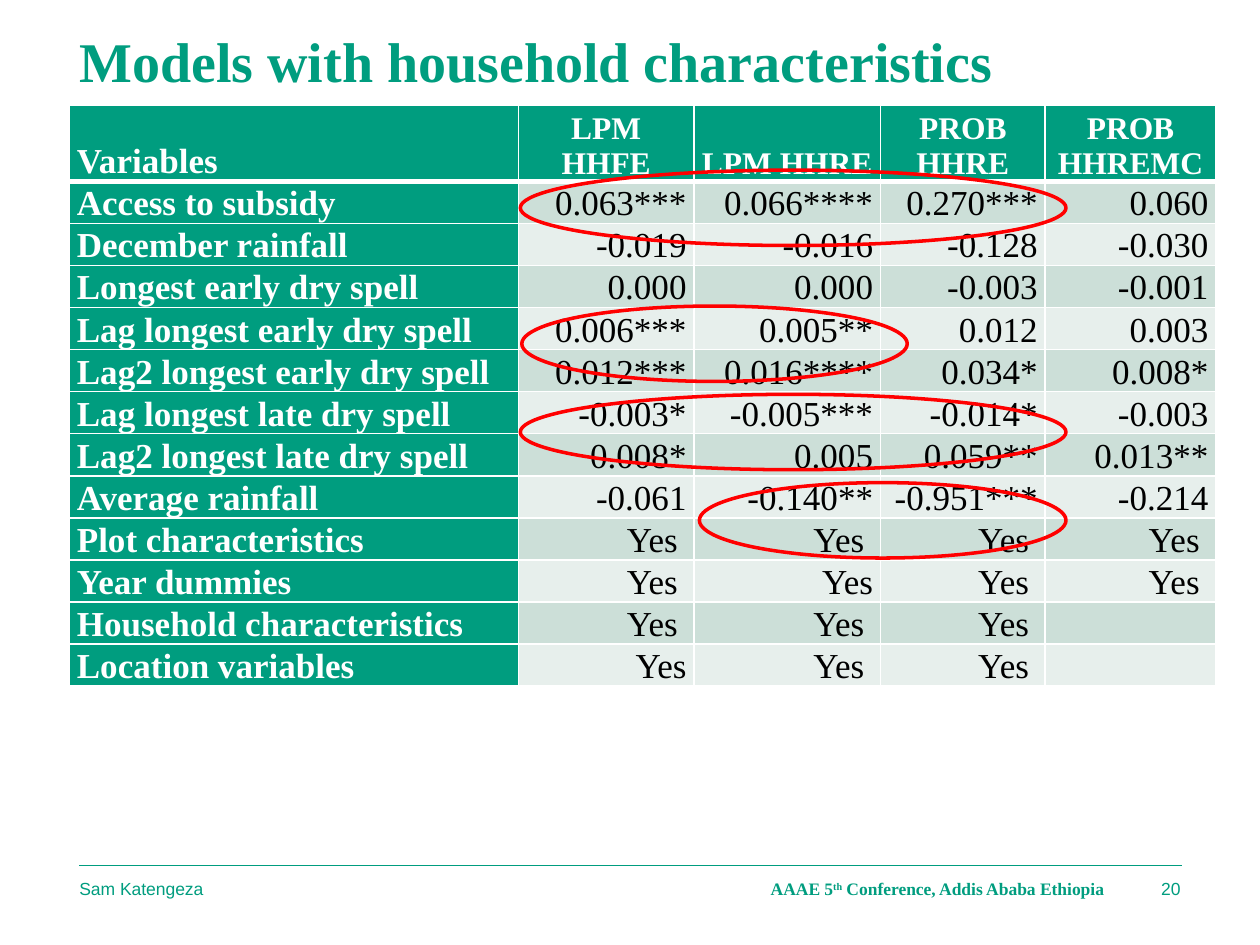
from lxml import etree
from pptx import Presentation
from pptx.dml.color import RGBColor
from pptx.enum.shapes import MSO_CONNECTOR, MSO_SHAPE
from pptx.enum.text import MSO_ANCHOR, PP_ALIGN
from pptx.oxml.ns import qn
from pptx.util import Cm, Pt

GREEN = RGBColor(0x00, 0x9D, 0x7F)
BAND_DARK = RGBColor(0xCC, 0xDF, 0xD8)
BAND_LIGHT = RGBColor(0xE7, 0xEF, 0xEC)
WHITE = RGBColor(0xFF, 0xFF, 0xFF)
BLACK = RGBColor(0x00, 0x00, 0x00)
RED = RGBColor(0xFF, 0x00, 0x00)
LEFT, CENTER, RIGHT, JUSTIFY = PP_ALIGN.LEFT, PP_ALIGN.CENTER, PP_ALIGN.RIGHT, PP_ALIGN.JUSTIFY
MIDDLE, BOTTOM = MSO_ANCHOR.MIDDLE, MSO_ANCHOR.BOTTOM
SERIF, SANS = "Times New Roman", "Arial"


def add_text(x, y, w, h, runs, size, font, bold, align, anchor):
    tf = s.shapes.add_textbox(Cm(x), Cm(y), Cm(w), Cm(h)).text_frame
    tf.margin_left = tf.margin_right = tf.margin_top = tf.margin_bottom = 0
    tf.word_wrap = True
    tf.vertical_anchor = anchor
    p = tf.paragraphs[0]
    p.alignment = align
    p.font.size, p.font.name, p.font.bold = Pt(size), font, bold
    p.font.color.rgb = GREEN
    for text in runs:
        p.add_run().text = text
    return p


def add_borders(cell, bottom):
    tcPr = cell._tc.get_or_add_tcPr()
    for tag, width in (("lnL", 1), ("lnR", 1), ("lnT", 1), ("lnB", bottom)):
        ln = etree.SubElement(tcPr, qn(f"a:{tag}"), w=str(Pt(width)))
        fill = etree.SubElement(ln, qn("a:solidFill"))
        etree.SubElement(fill, qn("a:srgbClr"), val=str(WHITE))


prs = Presentation()
prs.slide_width, prs.slide_height = Cm(25.4), Cm(19.05)
s = prs.slides.add_slide(prs.slide_layouts[6])

# Footer rule
rule = s.shapes.add_connector(MSO_CONNECTOR.STRAIGHT, Cm(1.6), Cm(17.45), Cm(23.83), Cm(17.45))
rule.line.color.rgb = GREEN
rule.line.width = Pt(1)
etree.SubElement(rule._element.spPr, qn("a:effectLst"))

# Title
add_text(1.6, 0.53, 20.7, 1.37, ["Models with household characteristics"],
         32, SERIF, True, JUSTIFY, BOTTOM)

# Regression table; a space after some "Yes" entries sets them off the edge
rows = [
    ("Variables", "LPM HHFE", "LPM HHRE", "PROB HHRE", "PROB HHREMC"),
    ("Access to subsidy", "0.063***", "0.066****", "0.270***", "0.060"),
    ("December rainfall", "-0.019", "-0.016", "-0.128", "-0.030"),
    ("Longest early dry spell", "0.000", "0.000", "-0.003", "-0.001"),
    ("Lag longest early dry spell", "0.006***", "0.005**", "0.012", "0.003"),
    ("Lag2 longest early dry spell", "0.012***", "0.016****", "0.034*", "0.008*"),
    ("Lag longest late dry spell", "-0.003*", "-0.005***", "-0.014*", "-0.003"),
    ("Lag2 longest late dry spell", "0.008*", "0.005", "0.059**", "0.013**"),
    ("Average rainfall", "-0.061", "-0.140**", "-0.951***", "-0.214"),
    ("Plot characteristics", "Yes ", "Yes ", "Yes ", "Yes "),
    ("Year dummies", "Yes ", "Yes", "Yes ", "Yes "),
    ("Household characteristics", "Yes ", "Yes ", "Yes ", ""),
    ("Location variables", "Yes", "Yes ", "Yes ", ""),
]
col_widths = [9.05, 3.54, 3.76, 3.32, 3.44]
head_height, row_height = 1.5, 0.84
table = s.shapes.add_table(len(rows), len(col_widths), Cm(1.4), Cm(2.13), Cm(sum(col_widths)),
                           Cm(head_height + row_height * (len(rows) - 1))).table
for col, width in zip(table.columns, col_widths):
    col.width = Cm(width)
for i, row in enumerate(rows):
    table.rows[i].height = Cm(row_height if i else head_height)
    for j, text in enumerate(row):
        cell = table.cell(i, j)
        is_head = i == 0 or j == 0
        add_borders(cell, 1 if i else 3)
        cell.fill.solid()
        cell.fill.fore_color.rgb = GREEN if is_head else BAND_DARK if i % 2 else BAND_LIGHT
        cell.margin_left = cell.margin_right = Cm(0.15)
        cell.margin_top = cell.margin_bottom = 0
        cell.vertical_anchor = BOTTOM
        p = cell.text_frame.paragraphs[0]
        p.alignment = LEFT if j == 0 else RIGHT if i else CENTER
        p.line_spacing = 1.0
        p.font.size = Pt(18 if i == 0 and j else 20)
        p.font.name, p.font.bold = SERIF, is_head
        p.font.color.rgb = WHITE if is_head else BLACK
        if text:
            p.add_run().text = text

# Footer
p = add_text(14.88, 17.7, 8.03, 0.43, ["AAAE 5", "th", " Conference, Addis Ababa Ethiopia"],
             10, SERIF, True, CENTER, MIDDLE)
p.runs[1]._r.get_or_add_rPr().set("baseline", "30000")
add_text(1.6, 17.7, 13.2, 0.43, ["Sam Katengeza"], 10, SANS, False, LEFT, MIDDLE)
add_text(22.96, 17.7, 0.84, 0.43, ["20"], 10, SANS, False, RIGHT, MIDDLE)

# Rings around the significant results
for x, y, w in ((10.49, 3.43, 11), (10.52, 6.17, 7.77), (10.49, 7.95, 11), (14.1, 9.73, 7.39)):
    ring = s.shapes.add_shape(MSO_SHAPE.OVAL, Cm(x), Cm(y), Cm(w), Cm(1.52))
    ring.shadow.inherit = False
    ring.fill.background()
    ring.line.color.rgb = RED
    ring.line.width = Pt(2)

prs.save("out.pptx")
